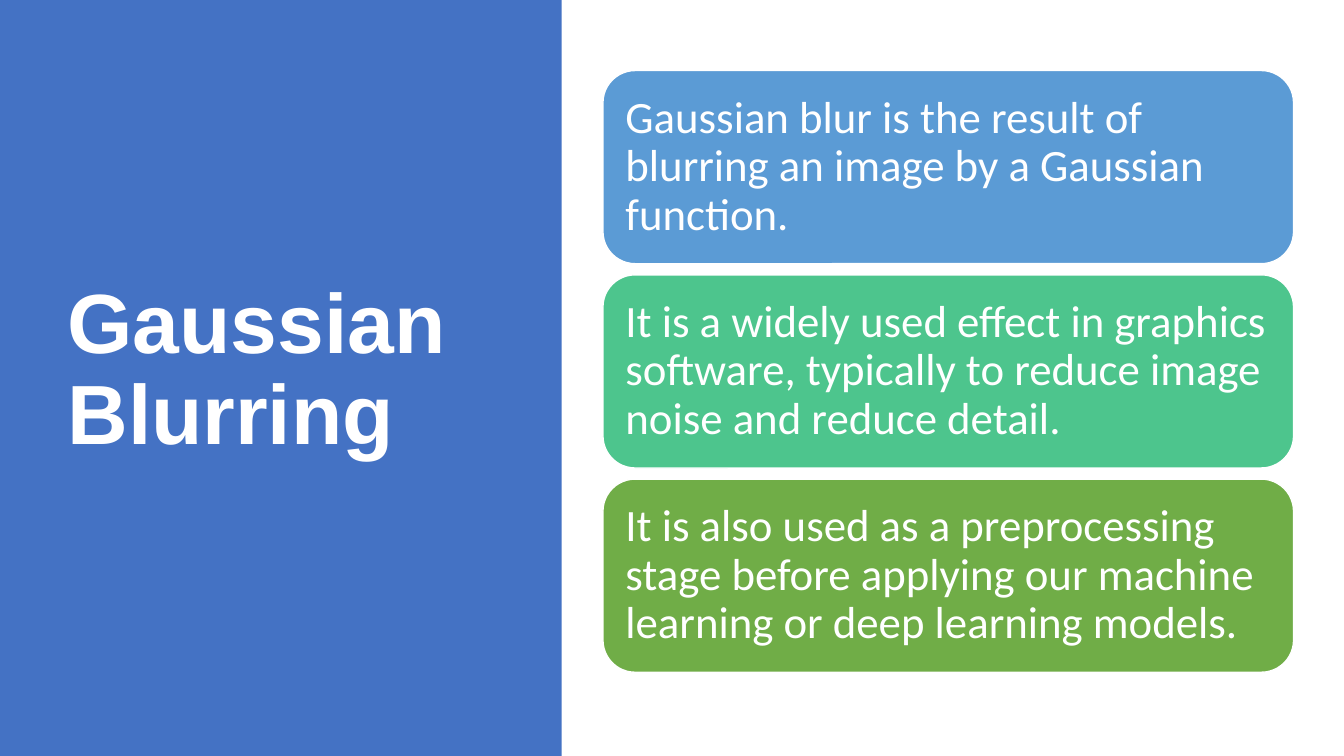
from pptx import Presentation
from pptx.dml.color import RGBColor
from pptx.enum import shapes, text
from pptx.util import Inches, Pt

WHITE = RGBColor(0xFF, 0xFF, 0xFF)
PANEL_BLUE = RGBColor(0x44, 0x72, 0xC4)
SKY_BLUE = RGBColor(0x5B, 0x9B, 0xD5)
MINT = RGBColor(0x4D, 0xC5, 0x8D)
GREEN = RGBColor(0x70, 0xAD, 0x47)

TITLE_FONT = {"name": "Arial", "size": Pt(60), "bold": True}
CARD_FONT = {"name": "Calibri", "size": Pt(32), "bold": False}

CARDS = [
    (SKY_BLUE, "Gaussian blur is the result of blurring an image by a Gaussian function."),
    (MINT, "It is a widely used effect in graphics software, typically to reduce "
           "image noise and reduce detail."),
    (GREEN, "It is also used as a preprocessing stage before applying our machine "
            "learning or deep learning models."),
]


def add_block(page, kind, left, top, width, height, fill):
    block = page.shapes.add_shape(
        kind, Inches(left), Inches(top), Inches(width), Inches(height))
    block.shadow.inherit = False
    block.fill.solid()
    block.fill.fore_color.rgb = fill
    block.line.fill.background()
    return block


def write(shape, wording, font, inset_x, inset_y):
    """Set white, left-aligned, vertically centred text; insets are in inches."""
    frame = shape.text_frame
    frame_format = {
        "word_wrap": True,
        "auto_size": text.MSO_AUTO_SIZE.NONE,
        "vertical_anchor": text.MSO_ANCHOR.MIDDLE,
        "margin_left": Inches(inset_x), "margin_right": Inches(inset_x),
        "margin_top": Inches(inset_y), "margin_bottom": Inches(inset_y),
    }
    for name, value in frame_format.items():
        setattr(frame, name, value)
    para = frame.paragraphs[0]
    para.alignment = text.PP_ALIGN.LEFT
    para.line_spacing = 0.9
    span = para.add_run()
    span.text = wording
    for name, value in font.items():
        setattr(span.font, name, value)
    span.font.color.rgb = WHITE


def title_panel(page, left, top, width, height):
    add_block(page, shapes.MSO_SHAPE.RECTANGLE, left, top, width, height, PANEL_BLUE)
    title = page.shapes.add_textbox(
        Inches(left + 0.57), Inches(top + 0.68),
        Inches(width - 1.41), Inches(height - 1.48))
    write(title, "Gaussian Blurring", TITLE_FONT, 0.1, 0.05)


def card_stack(page, left, top, width, height, gap=0.11):
    card_height = (height - gap * (len(CARDS) - 1)) / len(CARDS)
    for index, (color, wording) in enumerate(CARDS):
        card_top = top + index * (card_height + gap)
        card = add_block(page, shapes.MSO_SHAPE.ROUNDED_RECTANGLE,
                         left, card_top, width, card_height, color)
        card.line.color.rgb = WHITE
        card.line.width = Pt(1)
        write(card, wording, CARD_FONT, 0.13, 0.13)


def main():
    deck = Presentation()
    deck.slide_width = Inches(13.33)
    deck.slide_height = Inches(7.5)
    page = deck.slides.add_slide(deck.slide_layouts[6])
    title_panel(page, 0, 0, 5.57, 7.5)
    card_stack(page, 5.98, 0.7, 6.85, 5.97)
    deck.save("out.pptx")


if __name__ == "__main__":
    main()
